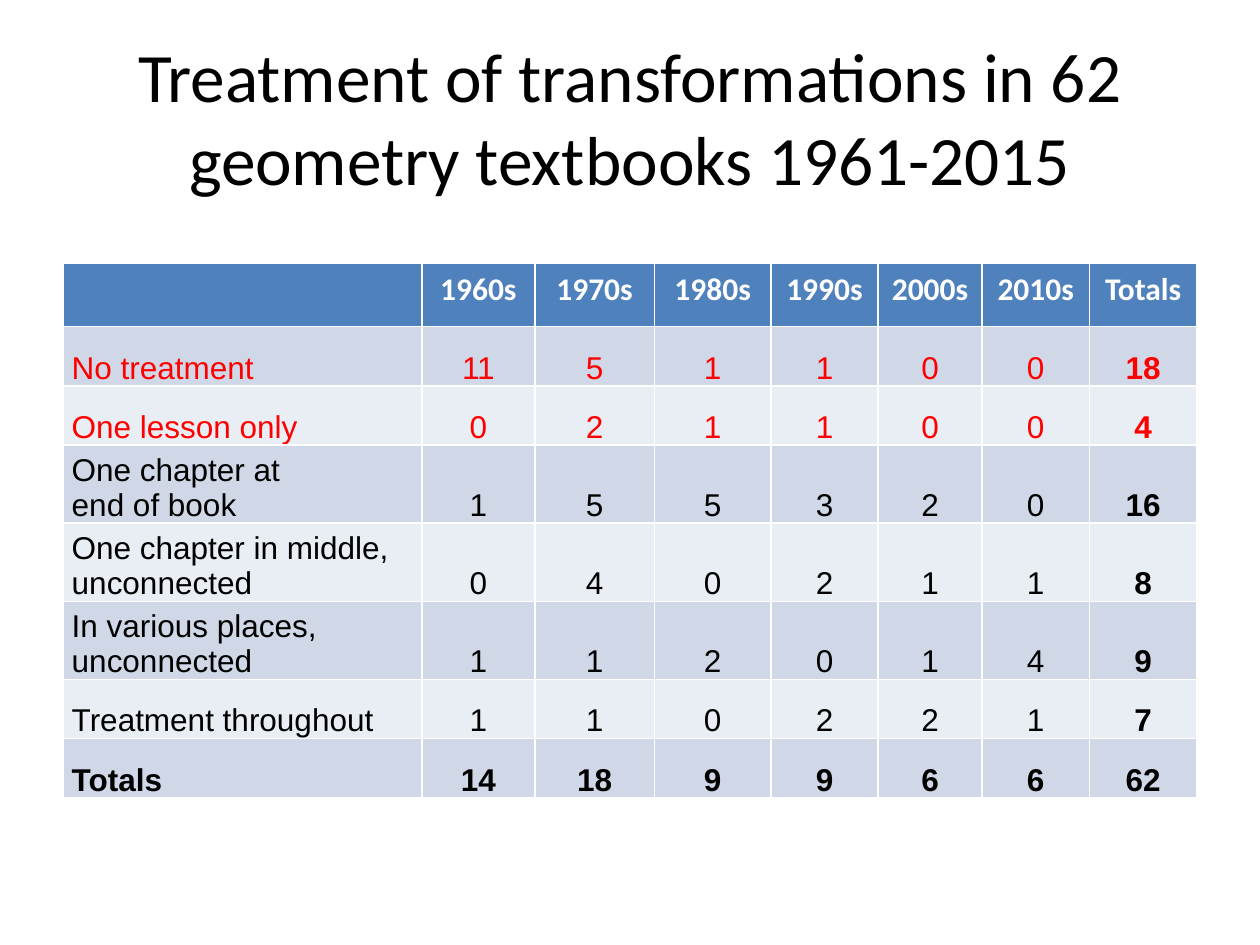
import pptx
import pptx.util
import pptx.dml.color
import pptx.enum.text

Pt = pptx.util.Pt
ALIGN = pptx.enum.text.PP_ALIGN
ANCHOR = pptx.enum.text.MSO_ANCHOR

TITLE = "Treatment of transformations in 62 geometry textbooks 1961-2015"
HEADINGS = ["", "1960s", "1970s", "1980s", "1990s", "2000s", "2010s", "Totals"]
TREATMENTS = [
    ("No treatment", 11, 5, 1, 1, 0, 0, 18),
    ("One lesson only", 0, 2, 1, 1, 0, 0, 4),
    ("One chapter at\vend of book", 1, 5, 5, 3, 2, 0, 16),
    ("One chapter in middle, unconnected", 0, 4, 0, 2, 1, 1, 8),
    ("In various places, unconnected", 1, 1, 2, 0, 1, 4, 9),
    ("Treatment throughout", 1, 1, 0, 2, 2, 1, 7),
    ("Totals", 14, 18, 9, 9, 6, 6, 62),
]
LITTLE_TREATMENT = ("No treatment", "One lesson only")
COLUMN_WIDTHS = [205.2, 64.4, 68.4, 66.6, 61.2, 59.4, 61.4, 61.4]
ROW_HEIGHTS = [36, 33.8, 33.8, 44.7, 44.7, 44.7, 33.8, 33.8]
BLUE, BANDS = "4F81BD", ("D0D8E8", "E9EDF4")
WHITE, BLACK, RED = "FFFFFF", "000000", "FF0000"


def color(hex_value):
    return pptx.dml.color.RGBColor.from_string(hex_value)


def write(frame, text, size=18, font="Arial", ink=BLACK, bold=False,
          align=ALIGN.CENTER, after=None):
    para = frame.paragraphs[0]
    para.text = text
    para.alignment = align
    if after is not None:
        para.space_after = Pt(after)
    for span in para.runs:
        span.font.size = Pt(size)
        span.font.name = font
        span.font.bold = bold
        span.font.color.rgb = color(ink)


def fill_cell(cell, hex_value):
    cell.fill.solid()
    cell.fill.fore_color.rgb = color(hex_value)


def add_title(page):
    box = page.shapes.title
    box.left, box.top, box.width, box.height = Pt(36), Pt(21.6), Pt(648), Pt(90)
    frame = box.text_frame
    frame.word_wrap = True
    frame.auto_size = pptx.enum.text.MSO_AUTO_SIZE.NONE
    frame.vertical_anchor = ANCHOR.MIDDLE
    write(frame, TITLE, size=39.6, font="Calibri")


def add_treatment_table(page):
    table = page.shapes.add_table(
        len(ROW_HEIGHTS), len(COLUMN_WIDTHS), Pt(36), Pt(150.7),
        Pt(sum(COLUMN_WIDTHS)), Pt(sum(ROW_HEIGHTS))).table
    for column, width in zip(table.columns, COLUMN_WIDTHS):
        column.width = Pt(width)
    for row, height in zip(table.rows, ROW_HEIGHTS):
        row.height = Pt(height)

    for cell, heading in zip(table.rows[0].cells, HEADINGS):
        fill_cell(cell, BLUE)
        if heading:
            write(cell.text_frame, heading, font="Calibri", ink=WHITE, bold=True)

    last_column = len(HEADINGS) - 1
    for number, values in enumerate(TREATMENTS):
        label = values[0]
        for position, value in enumerate(values):
            cell = table.cell(number + 1, position)
            fill_cell(cell, BANDS[number % 2])
            cell.vertical_anchor = ANCHOR.BOTTOM
            cell.margin_left = cell.margin_right = Pt(5)
            cell.margin_top = cell.margin_bottom = Pt(0)
            write(cell.text_frame, str(value), after=6,
                  ink=RED if label in LITTLE_TREATMENT else BLACK,
                  bold=label == "Totals" or position == last_column,
                  align=ALIGN.CENTER if position else ALIGN.LEFT)


def main():
    deck = pptx.Presentation()
    deck.slide_width, deck.slide_height = Pt(720), Pt(540)
    page = deck.slides.add_slide(deck.slide_layouts.get_by_name("Title Only"))
    add_title(page)
    add_treatment_table(page)
    deck.save("out.pptx")


if __name__ == "__main__":
    main()
